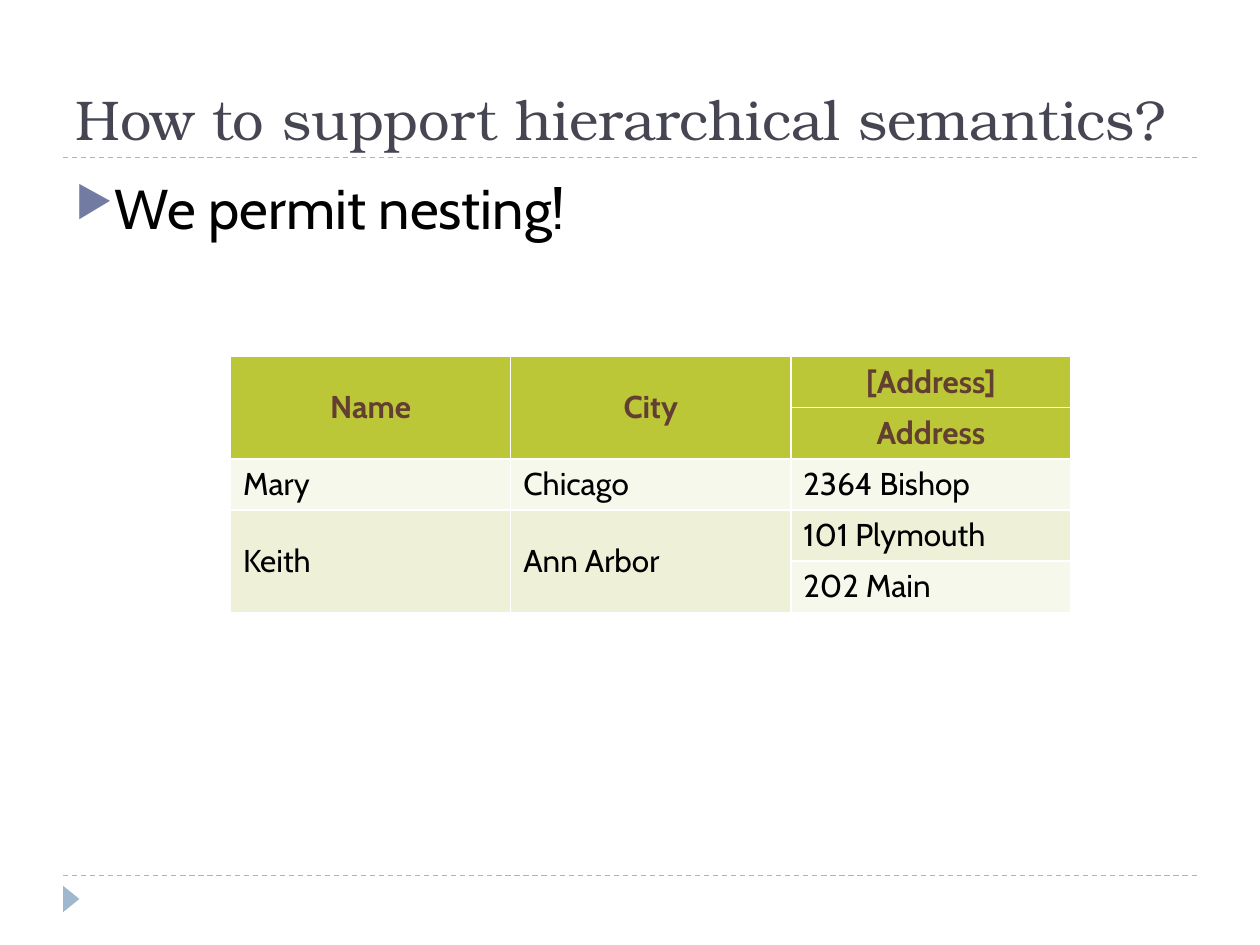
"""Build a slide that shows nested rows in a table."""
import pptx
import pptx.dml.color
import pptx.enum.dml
import pptx.enum.shapes
import pptx.enum.text
import pptx.oxml
import pptx.oxml.ns
import pptx.util
from pptx.util import Inches

ANCHOR = pptx.enum.text.MSO_ANCHOR
ALIGN = pptx.enum.text.PP_ALIGN


def color(value):
    return pptx.dml.color.RGBColor.from_string(value)


def element(markup):
    head, tail = markup.split(">", 1) if not markup.endswith("/>") else (markup[:-2], None)
    space = pptx.oxml.ns.nsdecls("a")
    return pptx.oxml.parse_xml(f"{head} {space}/>" if tail is None else f"{head} {space}>{tail}")


def write(frame, text, font="Cabin", size=18, ink="000000", bold=False,
          align=ALIGN.LEFT, anchor=ANCHOR.TOP):
    frame.word_wrap = True
    frame.vertical_anchor = anchor
    para = frame.paragraphs[0]
    para.alignment = align
    span = para.add_run()
    span.text = text
    span.font.name = font
    span.font.size = pptx.util.Pt(size)
    span.font.bold = bold
    span.font.color.rgb = color(ink)
    return para


class SlideBuilder:
    accent = "9FB8CD"
    bullet_ink = "727CA3"
    header_fill = "BBC737"
    header_ink = "633F32"
    bands = ("F7F8EC", "EEF1D7")
    border = "FFFFFF"

    def __init__(self, page):
        self.page = page

    def rule(self, top):
        line = self.page.shapes.add_connector(
            pptx.enum.shapes.MSO_CONNECTOR.STRAIGHT,
            Inches(0.5), Inches(top), Inches(9.5), Inches(top))
        line.line.color.rgb = color(self.accent)
        line.line.width = pptx.util.Pt(0.75)
        line.line.dash_style = pptx.enum.dml.MSO_LINE.DASH
        line._element.spPr.append(element("<a:effectLst/>"))

    def marker(self, left, top, width, height):
        triangle = self.page.shapes.add_shape(
            pptx.enum.shapes.MSO_SHAPE.ISOSCELES_TRIANGLE,
            Inches(left), Inches(top), Inches(width), Inches(height))
        triangle.rotation = 90
        triangle.shadow.inherit = False
        triangle.fill.solid()
        triangle.fill.fore_color.rgb = color(self.accent)
        triangle.line.fill.background()

    def text(self, top, height, text, **style):
        box = self.page.shapes.add_textbox(Inches(0.5), Inches(top), Inches(9), Inches(height))
        return write(box.text_frame, text, **style)

    def bullet(self, top, height, text, **style):
        properties = self.text(top, height, text, **style)._p.get_or_add_pPr()
        properties.set("marL", str(Inches(0.3)))
        properties.set("indent", str(-Inches(0.3)))
        for markup in (f'<a:buClr><a:srgbClr val="{self.bullet_ink}"/></a:buClr>',
                       '<a:buSzPct val="76000"/>', '<a:buChar char="▶"/>'):
            properties.append(element(markup))

    def cell(self, cell, fill, text, **style):
        cell.fill.solid()
        cell.fill.fore_color.rgb = color(fill)
        for index, side in enumerate(("lnL", "lnR", "lnT", "lnB")):
            cell._tc.get_or_add_tcPr().insert(index, element(
                f'<a:{side} w="12700"><a:solidFill><a:srgbClr val="{self.border}"/>'
                f'</a:solidFill></a:{side}>'))
        if text:
            write(cell.text_frame, text, **style)
            if cell.is_merge_origin:
                cell.vertical_anchor = ANCHOR.MIDDLE

    def table(self, left, top, width, height, rows, header_rows, merges):
        grid = self.page.shapes.add_table(
            len(rows), len(rows[0]), Inches(left), Inches(top),
            Inches(width), Inches(height)).table
        for first, last, column in merges:
            grid.cell(first, column).merge(grid.cell(last, column))
        header = dict(ink=self.header_ink, bold=True, align=ALIGN.CENTER)
        for row, values in enumerate(rows):
            is_header = row < header_rows
            fill = self.header_fill if is_header else self.bands[(row - header_rows) % 2]
            for column, value in enumerate(values):
                self.cell(grid.cell(row, column), fill, value, **(header if is_header else {}))


def main():
    deck = pptx.Presentation()
    deck.slide_width, deck.slide_height = Inches(10), Inches(7.5)
    builder = SlideBuilder(deck.slides.add_slide(deck.slide_layouts[6]))
    for top in (6.95, 1.25):
        builder.rule(top)
    builder.marker(0.46, 7.07, 0.21, 0.13)
    builder.text(0.17, 1.08, "How to support hierarchical semantics?", size=32,
                 font="TeX Gyre Bonum", ink="464653", anchor=ANCHOR.BOTTOM)
    builder.bullet(1.33, 2.08, "We permit nesting!", size=32)
    rows = [
        ("Name", "City", "[Address]"),
        ("", "", "Address"),
        ("Mary", "Chicago", "2364 Bishop"),
        ("Keith", "Ann Arbor", "101 Plymouth"),
        ("", "", "202 Main"),
    ]
    merges = [(first, first + 1, column) for first in (0, 3) for column in (0, 1)]
    builder.table(1.83, 2.83, 6.67, 2.03, rows, header_rows=2, merges=merges)
    deck.save("out.pptx")


if __name__ == "__main__":
    main()
